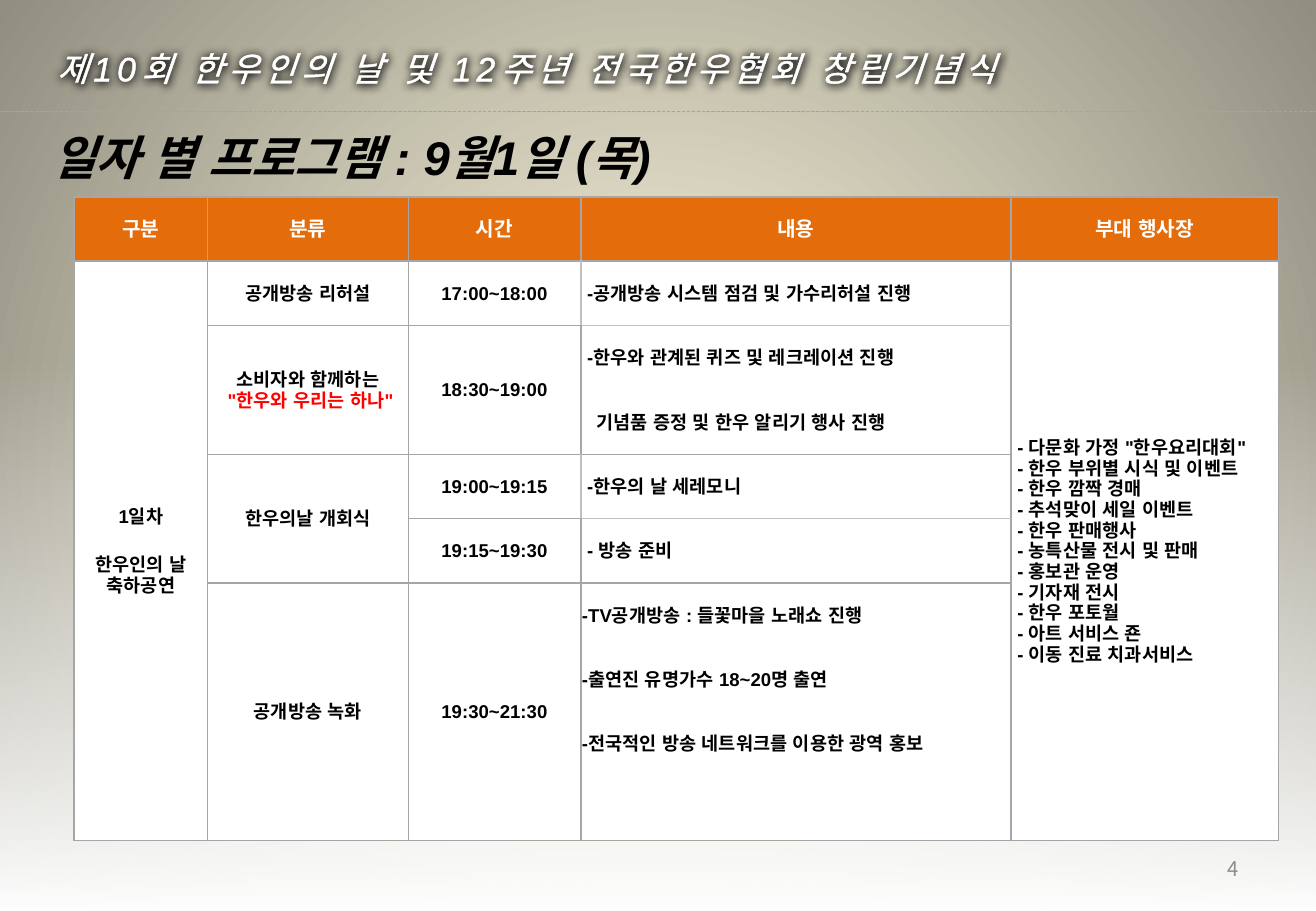
from dataclasses import dataclass

from lxml import etree
from pptx import Presentation
from pptx import util as u
from pptx.dml.color import RGBColor
from pptx.enum import dml, shapes, text
from pptx.oxml import parse_xml
from pptx.oxml.ns import nsdecls, qn

BLACK = RGBColor(0, 0, 0)
WHITE = RGBColor(255, 255, 255)
RED = RGBColor(255, 0, 0)
ORANGE = RGBColor(0xE4, 0x6C, 0x0A)
GREEN = RGBColor(0x98, 0xB9, 0x55)
MUTED = RGBColor(0x8C, 0x8C, 0x8C)
GRAY = RGBColor(0xA6, 0xA6, 0xA6)
PALE = RGBColor(0xBF, 0xBF, 0xBF)
CREAM = RGBColor(0xFC, 0xF7, 0xDD)
STONE = RGBColor(0x91, 0x8E, 0x81)
LATIN, HANGUL = "Arial", "Noto Sans CJK KR"
LEFT, MID, RIGHT = text.PP_ALIGN.LEFT, text.PP_ALIGN.CENTER, text.PP_ALIGN.RIGHT


@dataclass
class Line:
    words: str
    color: RGBColor = BLACK
    gap: float = 0
    indent: float = 0


@dataclass
class Entry:
    row: int
    col: int
    lines: list[Line]
    span: int = 1
    align: text.PP_ALIGN = MID
    fill: RGBColor = WHITE


def write(para, words: str, *, size: float, color: RGBColor, font: str = LATIN,
          bold: bool = False, slant: bool = False, align=LEFT):
    para.alignment = align
    run = para.add_run()
    run.text = words
    face = run.font
    face.size, face.name, face.bold, face.italic = u.Pt(size), font, bold, slant
    face.color.rgb = color
    asian = etree.SubElement(run._r.get_or_add_rPr(), qn("a:ea"))
    asian.set("typeface", font)
    run._r.rPr.find(qn("a:latin")).addnext(asian)
    return run


def add_box(slide, left: float, top: float, width: float, height: float, wrap: bool = True):
    box = slide.shapes.add_textbox(u.Inches(left), u.Inches(top),
                                   u.Inches(width), u.Inches(height))
    box.text_frame.word_wrap = wrap
    return box


def blend(first: RGBColor, last: RGBColor, shade: str, alpha: int = 100):
    """Build a two-stop gradient fill."""
    return parse_xml(
        f'<a:gradFill {nsdecls("a")} rotWithShape="1"><a:gsLst>'
        f'<a:gs pos="0"><a:srgbClr val="{first}"/></a:gs>'
        f'<a:gs pos="100000"><a:srgbClr val="{last}"><a:alpha val="{alpha * 1000}"/>'
        f'</a:srgbClr></a:gs></a:gsLst>{shade}</a:gradFill>')


def swap_fill(props, grad) -> None:
    old = props.find(qn("a:solidFill"))
    props.replace(old, grad)


def edge(cell, sides: dict) -> None:
    """Draw the cell borders; a side without colour stays open."""
    props = cell._tc.get_or_add_tcPr()
    for spot, side in enumerate("LRTB"):
        color = sides[side]
        paint = (f'<a:solidFill><a:srgbClr val="{color}"/></a:solidFill>'
                 if color else "<a:noFill/>")
        props.insert(spot, parse_xml(
            f'<a:ln{side} {nsdecls("a")} w="12700">{paint}</a:ln{side}>'))


def fill_cell(table, item: Entry) -> None:
    cell = table.cell(item.row, item.col)
    if item.span > 1:
        cell.merge(table.cell(item.row + item.span - 1, item.col))
    cell.fill.solid()
    cell.fill.fore_color.rgb = item.fill
    frame = cell.text_frame
    for spot, line in enumerate(item.lines):
        para = frame.paragraphs[0] if spot == 0 else frame.add_paragraph()
        if line.gap:
            para.space_before = u.Pt(line.gap)
        if line.indent:
            para._p.get_or_add_pPr().set("marL", str(u.Inches(line.indent)))
        write(para, line.words, size=12 if item.row == 0 else 11,
              color=line.color, bold=True, align=item.align)


# Table contents
HEADS = ["구분", "분류", "시간", "내용", "부대 행사장"]
KINDS = [(1, 1, ["공개방송 리허설"]), (4, 2, ["한우의날 개회식"]), (6, 4, ["공개방송 녹화"])]
TIMES = [(1, 1, "17:00~18:00"), (2, 2, "18:30~19:00"), (4, 1, "19:00~19:15"),
         (5, 1, "19:15~19:30"), (6, 4, "19:30~21:30")]
TASKS = [" -공개방송 시스템 점검 및 가수리허설 진행", " -한우와 관계된 퀴즈 및 레크레이션 진행",
         "기념품 증정 및 한우 알리기 행사 진행", " -한우의 날 세레모니", " - 방송 준비",
         "-TV공개방송 : 들꽃마을 노래쇼 진행", "-출연진 유명가수 18~20명 출연",
         "-전국적인 방송 네트워크를 이용한 광역 홍보"]
VENUES = ['다문화 가정 "한우요리대회"', "한우 부위별 시식 및 이벤트", "한우 깜짝 경매",
          "추석맞이 세일 이벤트", "한우 판매행사", "농특산물 전시 및 판매", "홍보관 운영",
          "기자재 전시", "한우 포토월", "아트 서비스 죤", "이동 진료 치과서비스"]
WIDTHS = [1.1, 1.65, 1.42, 3.54, 2.2]
ROWS, TALL = 10, 0.53
TASK_COL = 3
OPEN = {2, 6, 7, 8}   # content rows with no rule below
SOFT = {1, 4}         # content rows with a paler rule below

ITEMS = [Entry(0, col, [Line(head, WHITE)], fill=ORANGE) for col, head in enumerate(HEADS)]
ITEMS += [Entry(1, 0, [Line("1일차"), Line("한우인의 날", gap=16), Line("축하공연")], 9)]
ITEMS += [Entry(row, 1, [Line(word) for word in words], span) for row, span, words in KINDS]
ITEMS += [Entry(2, 1, [Line("소비자와 함께하는"), Line(' "한우와 우리는 하나"', RED)], 2)]
ITEMS += [Entry(row, 2, [Line(hours)], span) for row, span, hours in TIMES]
ITEMS += [Entry(row, TASK_COL, [Line(task, indent=0.12 if row == 3 else 0)], align=LEFT)
          for row, task in enumerate(TASKS, 1)]
ITEMS += [Entry(9, TASK_COL, [])]
ITEMS += [Entry(1, 4, [Line(f" - {venue}") for venue in VENUES], 9, LEFT)]


def add_table(slide) -> None:
    table = slide.shapes.add_table(ROWS, len(WIDTHS), u.Inches(0.61), u.Inches(1.62),
                                   u.Inches(sum(WIDTHS)), u.Inches(ROWS * TALL)).table
    table.first_row = table.horz_banding = False
    for col, width in zip(table.columns, WIDTHS):
        col.width = u.Inches(width)
    for row in table.rows:
        row.height = u.Inches(TALL)
    for item in ITEMS:
        fill_cell(table, item)
    for row in range(ROWS):
        for col in range(len(WIDTHS)):
            cell = table.cell(row, col)
            cell.margin_left = cell.margin_right = cell.margin_top = u.Inches(0.01)
            cell.margin_bottom = 0
            cell.vertical_anchor = text.MSO_ANCHOR.MIDDLE
            sides = dict.fromkeys("LRTB", GRAY)
            if col == TASK_COL:
                for side, near in (("T", row - 1), ("B", row)):
                    sides[side] = None if near in OPEN else PALE if near in SOFT else GRAY
            if row in SOFT and col in (TASK_COL - 1, TASK_COL):
                sides["R" if col < TASK_COL else "L"] = PALE
            edge(cell, sides)


def main() -> None:
    deck = Presentation()
    deck.slide_width, deck.slide_height = u.Inches(10.83), u.Inches(7.5)
    slide = deck.slides.add_slide(deck.slide_layouts[6])

    # Background and fading white veil
    slide.background.fill.solid()
    swap_fill(slide._element.cSld.bg.bgPr, blend(
        CREAM, STONE, '<a:path path="circle"><a:fillToRect l="50000" t="50000" '
        'r="50000" b="50000"/></a:path>'))
    veil = slide.shapes.add_shape(shapes.MSO_SHAPE.RECTANGLE, 0, u.Inches(2.96),
                                  u.Inches(10.84), u.Inches(4.55))
    veil.shadow.inherit = False
    veil.line.fill.background()
    veil.fill.solid()
    swap_fill(veil._element.spPr, blend(WHITE, WHITE, '<a:lin ang="16200000" scaled="0"/>', 0))

    # Dashed rule under the title
    rule = slide.shapes.add_connector(shapes.MSO_CONNECTOR.STRAIGHT, 0, u.Inches(0.92),
                                      u.Inches(10.83), u.Inches(0.92))
    rule.line.color.rgb, rule.line.width = GREEN, u.Pt(0.75)
    rule.line.dash_style = dml.MSO_LINE.SQUARE_DOT
    etree.SubElement(rule._element.spPr, qn("a:effectLst"))

    # Heading and page number
    head = add_box(slide, 0.33, 0.87, 5.8, 0.65, wrap=False).text_frame
    head.auto_size = text.MSO_AUTO_SIZE.SHAPE_TO_FIT_TEXT
    head.paragraphs[0].line_spacing = 1.3
    write(head.paragraphs[0], "일자 별 프로그램 : 9월1일 (목)", size=28, color=BLACK,
          bold=True, slant=True)
    page = add_box(slide, 7.76, 6.95, 2.53, 0.4).text_frame
    page.vertical_anchor = text.MSO_ANCHOR.MIDDLE
    write(page.paragraphs[0], "4", size=12, color=MUTED, font=HANGUL, align=RIGHT)

    add_table(slide)

    # Title with outlined, spaced letters and a dark halo
    title = add_box(slide, 0.19, 0.12, 9.32, 0.71)
    title.text_frame.auto_size = text.MSO_AUTO_SIZE.SHAPE_TO_FIT_TEXT
    for words, size in ((" ", 36), ("제10회 한우인의 날 및 12주년 전국한우협회 창립기념식", 20)):
        run = write(title.text_frame.paragraphs[0], words, size=size, color=WHITE, slant=True)
        props = run._r.rPr
        props.set("spc", "300")
        props.insert(0, parse_xml(
            f'<a:ln {nsdecls("a")} w="18415"><a:solidFill><a:srgbClr val="{WHITE}"/>'
            '</a:solidFill></a:ln>'))
    title._element.spPr.append(parse_xml(
        f'<a:effectLst {nsdecls("a")}><a:outerShdw blurRad="63500" dist="0" dir="3600000">'
        f'<a:srgbClr val="{BLACK}"/></a:outerShdw></a:effectLst>'))

    deck.save("out.pptx")


if __name__ == "__main__":
    main()
